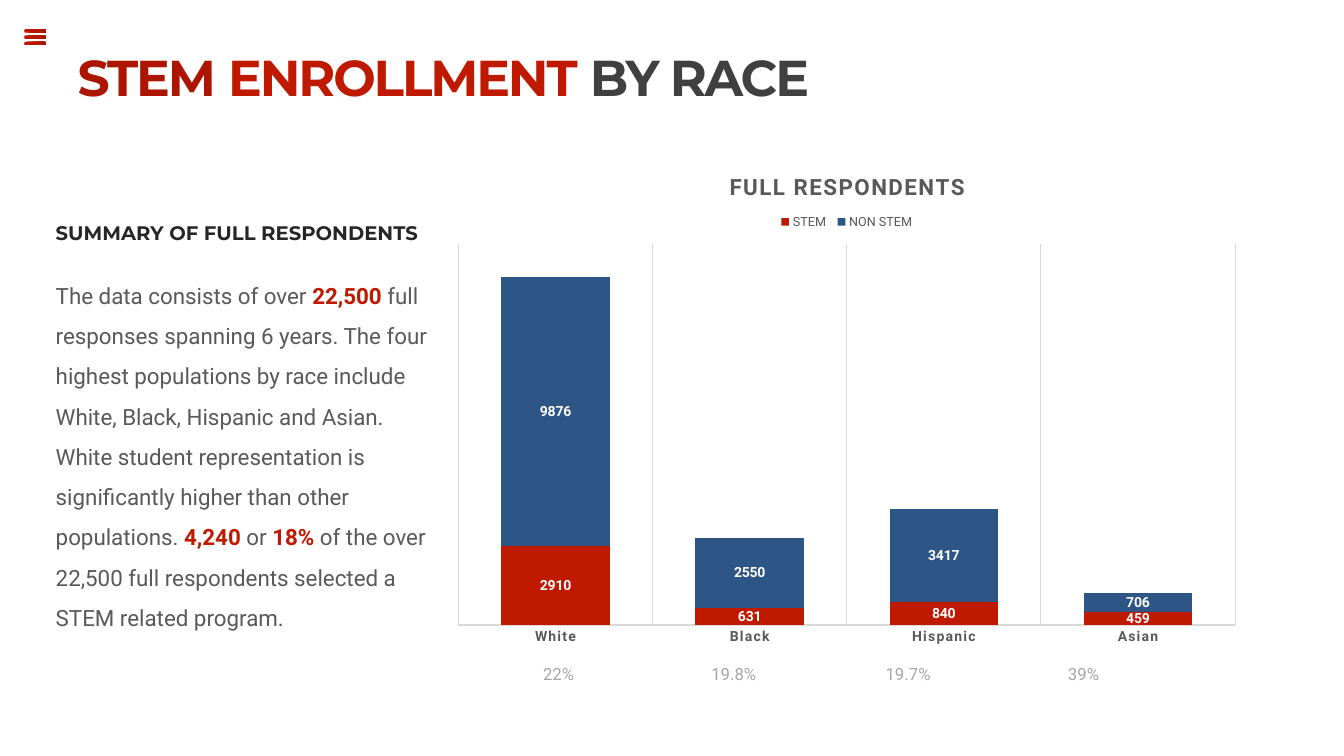
from pptx import Presentation
from pptx.chart.data import CategoryChartData
from pptx.dml.color import RGBColor
from pptx.enum.chart import XL_CHART_TYPE, XL_LABEL_POSITION, XL_LEGEND_POSITION, XL_TICK_MARK
from pptx.enum.text import MSO_ANCHOR, MSO_AUTO_SIZE, PP_ALIGN
from pptx.oxml.ns import qn
from pptx.util import Inches, Pt
from lxml.etree import SubElement

RED = RGBColor(0xBF, 0x19, 0x00)
BRICK = RGBColor(0xAC, 0x16, 0x00)
WINE = RGBColor(0x8F, 0x13, 0x00)
BLUE = RGBColor(0x2D, 0x56, 0x87)
INK = RGBColor(0x26, 0x26, 0x26)
DARK = RGBColor(0x40, 0x40, 0x40)
GRAY = RGBColor(0x59, 0x59, 0x59)
PALE = RGBColor(0xA6, 0xA6, 0xA6)
RULE = RGBColor(0xD9, 0xD9, 0xD9)
WHITE = RGBColor(0xFF, 0xFF, 0xFF)
HEAD, BODY = "Montserrat", "Roboto"
CELL = Inches(0.1)


def grid(*cells):
    return [int(n * CELL) for n in cells]


def say(para, text, size=16, color=GRAY, face=BODY, bold=False, space=0):
    run = para.add_run()
    run.text = text
    font = run.font
    font.size, font.name, font.bold = Pt(size), face, bold
    font.color.rgb = color
    if space:
        run._r.get_or_add_rPr().set("spc", str(space))
    return run


deck = Presentation()
deck.slide_width, deck.slide_height = grid(133.4, 75)
slide = deck.slides.add_slide(deck.slide_layouts[5])
shapes = slide.shapes

title = shapes.title
title.left, title.top, title.width, title.height = grid(6.7, 4.1, 100, 7.1)
frame = title.text_frame
frame.auto_size = MSO_AUTO_SIZE.NONE
frame.vertical_anchor = MSO_ANCHOR.TOP
para = frame.paragraphs[0]
para.alignment = PP_ALIGN.LEFT
look = dict(size=36, face=HEAD, bold=True, space=-150)
say(para, "STEM ", color=BRICK, **look)
word = say(para, "ENROLLMENT ", color=RED, **look)
say(para, "BY RACE", color=DARK, **look)

pen = None
for row in range(3):
    top = 2.9 + 0.62 * row
    dots = [grid(x, top + y) for x, y in (
        (2.5, 0), (4.45, 0), (4.55, 0.07), (4.6, 0.17), (4.55, 0.28),
        (4.45, 0.35), (2.5, 0.35), (2.43, 0.28), (2.4, 0.17), (2.43, 0.07))]
    if pen:
        pen.move_to(*dots[0])
    else:
        pen = shapes.build_freeform(*dots[0])
    pen.add_line_segments(dots[1:], close=True)
menu = pen.convert_to_shape()
menu.shadow.inherit = False
menu.line.fill.background()
for fill, end in ((word.font.fill, WINE), (menu.fill, BRICK)):
    fill.gradient()
    fill.gradient_angle = 0
    for stop, color in zip(fill.gradient_stops, (RED, end)):
        stop.color.rgb = color

paras = []
for spot, pitch in (((4.55, 21.4, 38, 3.4), 1), ((4.55, 26.15, 39.3, 41.4), 1.5), ((53.9, 64.8, 63.2, 2.7), 1.5)):
    frame = shapes.add_textbox(*grid(*spot)).text_frame
    frame.word_wrap = True
    frame.auto_size = MSO_AUTO_SIZE.SHAPE_TO_FIT_TEXT
    frame.paragraphs[0].line_spacing = pitch
    paras.append(frame.paragraphs[0])
topic, story, rates = paras

say(topic, "SUMMARY OF FULL RESPONDENTS", 14, INK, HEAD, True)
for text, key in (
    ("The data consists of over", False),
    (" 22,500 ", True),
    ("full responses spanning 6 years. The four highest populations by race include White, Black, "
     "Hispanic and Asian. White student representation is significantly higher than other populations. ", False),
    ("4,240", True),
    (" or ", False),
    ("18% ", True),
    ("of the over 22,500 full respondents selected a STEM related program.", False),
):
    say(story, text, color=RED if key else GRAY, bold=key)

frame.margin_left = frame.margin_right = frame.margin_top = frame.margin_bottom = 0
tabs = SubElement(rates._p.get_or_add_pPr(), qn("a:tabLst"))
for stop in grid(16.7, 34, 52.1):
    SubElement(tabs, qn("a:tab"), pos=str(stop), algn="l")
say(rates, "22%\t19.8%\t19.7%\t39%", 12, PALE)

data = CategoryChartData()
data.categories = ["White", "Black", "Hispanic", "Asian"]
data.add_series("STEM", (2910, 631, 840, 459))
data.add_series("NON STEM", (9876, 2550, 3417, 706))
chart = shapes.add_chart(XL_CHART_TYPE.COLUMN_STACKED, *grid(43.9, 15.3, 80.3, 49.7), data).chart
chart.font.name, chart.font.size = BODY, Pt(10)
chart.has_title = True
say(chart.chart_title.text_frame.paragraphs[0], "FULL RESPONDENTS", bold=True, space=120)

chart.has_legend = True
legend = chart.legend
legend.position = XL_LEGEND_POSITION.TOP
legend.include_in_layout = False
legend.font.size, legend.font.name = Pt(9), BODY
legend.font.color.rgb = GRAY

plot = chart.plots[0]
plot.gap_width, plot.overlap, plot.vary_by_categories = 79, 100, False
for group, color in zip(plot.series, (RED, BLUE)):
    group.format.fill.solid()
    group.format.fill.fore_color.rgb = color
    marks = group.data_labels
    marks.show_value = True
    marks.position = XL_LABEL_POSITION.CENTER
    marks.font.size, marks.font.name, marks.font.bold = Pt(10), BODY, True
    marks.font.color.rgb = WHITE

axis = chart.category_axis
axis.major_tick_mark = XL_TICK_MARK.NONE
axis.has_major_gridlines = True
for line in (axis.format.line, axis.major_gridlines.format.line):
    line.color.rgb = RULE
    line.width = Pt(0.75)
font = axis.tick_labels.font
font.size, font.name, font.bold = Pt(10), BODY, True
font.color.rgb = GRAY
root = chart.element
root.xpath(".//c:catAx//a:defRPr")[0].set("spc", "100")
chart.value_axis.visible = False
chart.value_axis.has_major_gridlines = False
chart.value_axis.minimum_scale, chart.value_axis.maximum_scale = 0, 14000

for name, slot, spot in (
    ("title", 1, {"x": 0.35, "y": 0.03}),
    ("legend", 1, {"x": 0.41, "y": 0.11, "w": 0.18, "h": 0.05}),
    ("plotArea", 0, {"x": 0.02, "y": 0.18, "w": 0.96, "h": 0.76}),
):
    node = root.xpath("c:chart/c:" + name)[0]
    for old in node.findall(qn("c:layout")):
        node.remove(old)
    place = SubElement(node, qn("c:layout"))
    node.insert(slot, place)
    manual = SubElement(place, qn("c:manualLayout"))
    if name == "plotArea":
        SubElement(manual, qn("c:layoutTarget"), val="inner")
    for side in "xy":
        SubElement(manual, qn("c:" + side + "Mode"), val="edge")
    for key, share in spot.items():
        SubElement(manual, qn("c:" + key), val=str(share))

deck.save("out.pptx")
